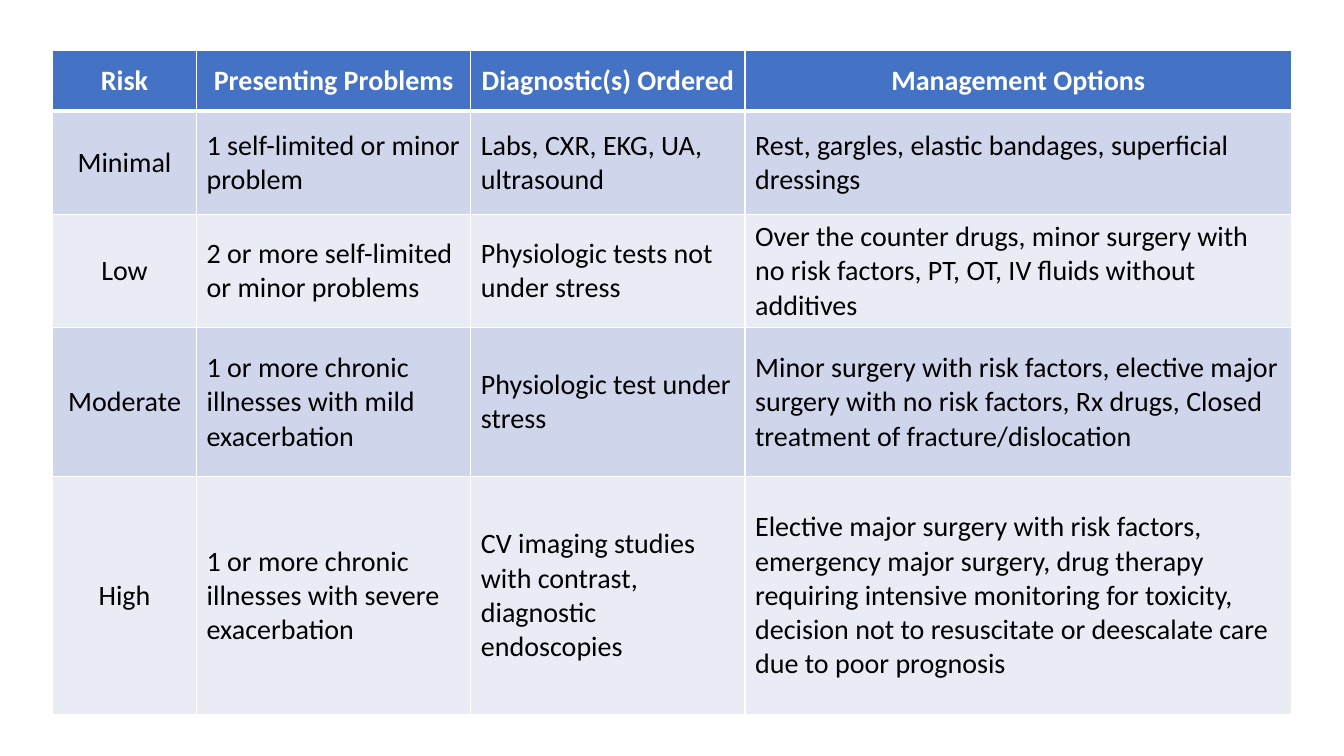
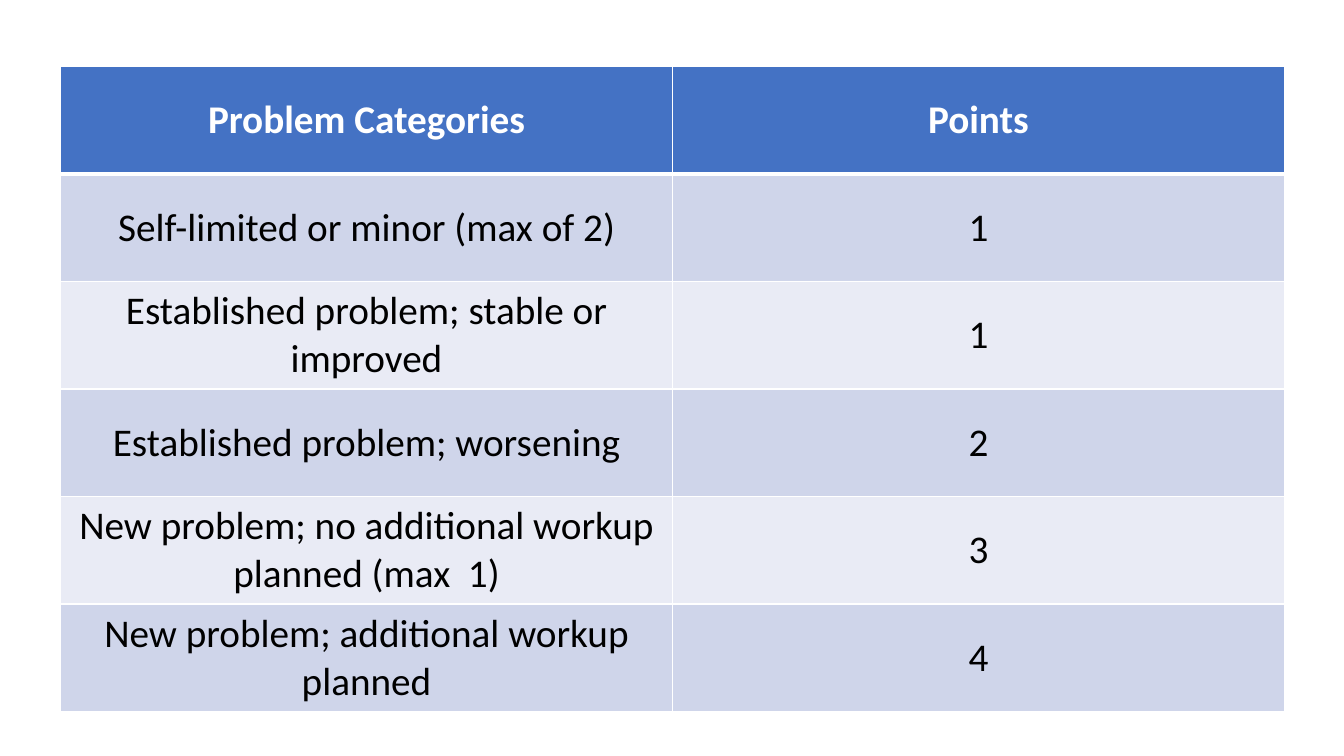
from dataclasses import dataclass

from lxml.etree import SubElement
from pptx import Presentation
from pptx.dml.color import RGBColor
from pptx.enum.text import MSO_ANCHOR, PP_ALIGN
from pptx.oxml.ns import qn
from pptx.presentation import Presentation as Deck
from pptx.table import _Cell as Cell
from pptx.util import Inches, Pt

WHITE = RGBColor(0xFF, 0xFF, 0xFF)
BLACK = RGBColor(0x00, 0x00, 0x00)
HEADER_BLUE = RGBColor(0x44, 0x72, 0xC4)
BAND_DARK = RGBColor(0xCF, 0xD5, 0xEA)
BAND_LIGHT = RGBColor(0xE9, 0xEB, 0xF5)
FONT = "Calibri"
THIN, THICK = Pt(1), Pt(3)
BLANK_LAYOUT = 6


@dataclass(frozen=True)
class TableSpec:
    left: float
    top: float
    col_widths: list[float]
    row_heights: list[float]
    font_size: int
    centered_cols: set[int]
    rows: list[list[str]]


RISK = TableSpec(
    left=0.52,
    top=0.5,
    col_widths=[1.43, 2.72, 2.72, 5.42],
    row_heights=[0.6, 1.03, 1.03, 1.48, 2.36],
    font_size=20,
    centered_cols={0},
    rows=[
        ["Risk", "Presenting Problems", "Diagnostic(s) Ordered", "Management Options"],
        ["Minimal", "1 self-limited or minor problem", "Labs, CXR, EKG, UA, ultrasound",
         "Rest, gargles, elastic bandages, superficial dressings"],
        ["Low", "2 or more self-limited or minor problems",
         "Physiologic tests not under stress",
         "Over the counter drugs, minor surgery with no risk factors, PT, OT, "
         "IV fluids without additives"],
        ["Moderate", "1 or more chronic illnesses with mild exacerbation",
         "Physiologic test under stress",
         "Minor surgery with risk factors, elective major surgery with no risk "
         "factors, Rx drugs, Closed treatment of fracture/dislocation"],
        ["High", "1 or more chronic illnesses with severe exacerbation",
         "CV imaging studies with contrast, diagnostic endoscopies",
         "Elective major surgery with risk factors, emergency major surgery, drug "
         "therapy requiring intensive monitoring for toxicity, decision not to "
         "resuscitate or deescalate care due to poor prognosis"],
    ],
)

POINTS = TableSpec(
    left=0.6,
    top=0.66,
    col_widths=[6.07] * 2,
    row_heights=[6.4 / 6] * 6,
    font_size=28,
    centered_cols={0, 1},
    rows=[
        ["Problem Categories", "Points"],
        ["Self-limited or minor (max of 2)", "1"],
        ["Established problem; stable or improved", "1"],
        ["Established problem; worsening", "2"],
        ["New problem; no additional workup planned (max  1)", "3"],
        ["New problem; additional workup planned", "4"],
    ],
)


def set_borders(cell: Cell, top: Pt, bottom: Pt) -> None:
    """Draw white borders; call before filling, as lines precede the fill in XML."""
    tc_pr = cell._tc.get_or_add_tcPr()
    for side, width in (("L", THIN), ("R", THIN), ("T", top), ("B", bottom)):
        line = SubElement(tc_pr, qn(f"a:ln{side}"), w=str(width))
        fill = SubElement(line, qn("a:solidFill"))
        SubElement(fill, qn("a:srgbClr"), val=str(WHITE))


def format_cell(cell: Cell, text: str, row: int, size: int, centered: bool) -> None:
    is_header = row == 0
    set_borders(cell, top=THICK if row == 1 else THIN, bottom=THICK if is_header else THIN)
    cell.fill.solid()
    band = BAND_DARK if row % 2 else BAND_LIGHT
    cell.fill.fore_color.rgb = HEADER_BLUE if is_header else band
    cell.vertical_anchor = MSO_ANCHOR.MIDDLE
    p = cell.text_frame.paragraphs[0]
    p.alignment = PP_ALIGN.CENTER if is_header or centered else PP_ALIGN.LEFT
    r = p.add_run()
    r.text = text
    r.font.name = FONT
    r.font.size = Pt(size)
    r.font.bold = is_header
    r.font.color.rgb = WHITE if is_header else BLACK


def add_table_slide(prs: Deck, spec: TableSpec) -> None:
    s = prs.slides.add_slide(prs.slide_layouts[BLANK_LAYOUT])
    table = s.shapes.add_table(
        len(spec.rows), len(spec.col_widths), Inches(spec.left), Inches(spec.top),
        Inches(sum(spec.col_widths)), Inches(sum(spec.row_heights)),
    ).table
    for column, width in zip(table.columns, spec.col_widths):
        column.width = Inches(width)
    for row, height in zip(table.rows, spec.row_heights):
        row.height = Inches(height)
    for i, texts in enumerate(spec.rows):
        for j, text in enumerate(texts):
            format_cell(table.cell(i, j), text, i, spec.font_size, j in spec.centered_cols)


def main() -> None:
    prs = Presentation()
    prs.slide_width, prs.slide_height = Inches(13.33), Inches(7.5)
    for spec in (RISK, POINTS):
        add_table_slide(prs, spec)
    prs.save("out.pptx")


if __name__ == "__main__":
    main()
